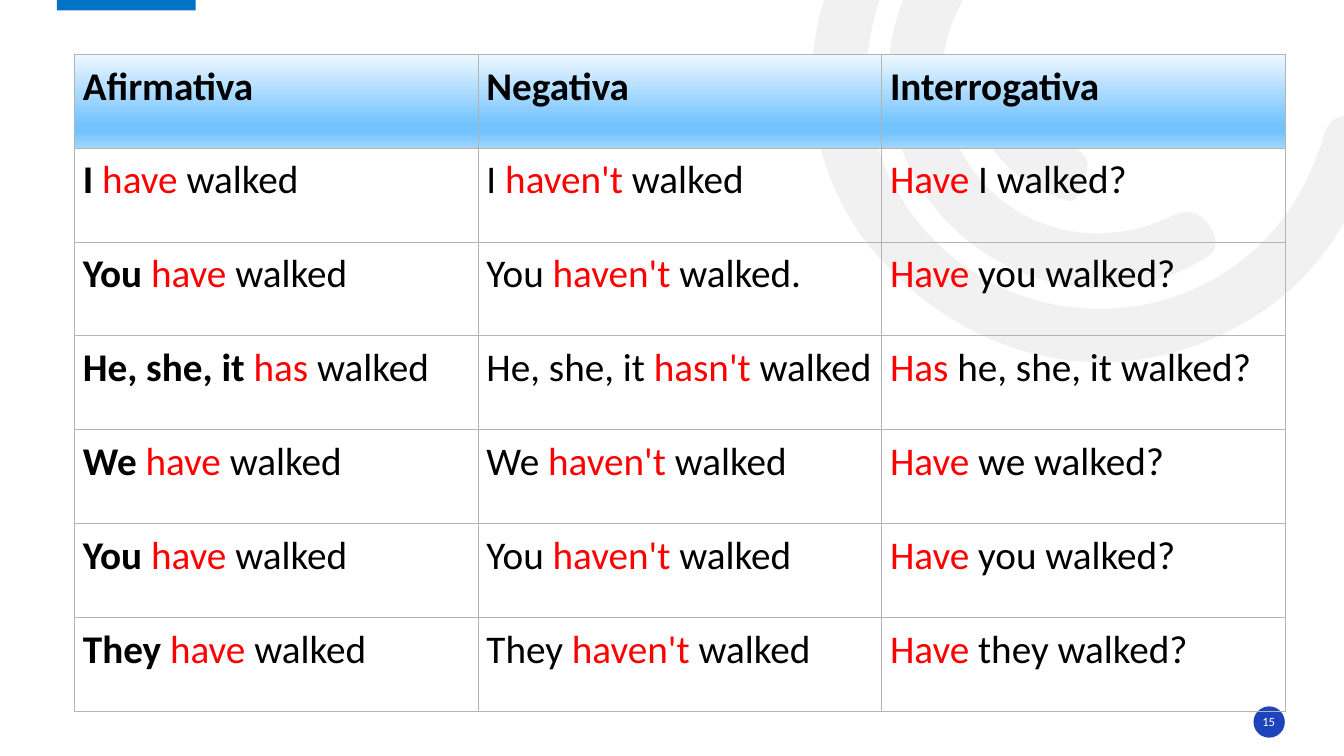
import math

import pptx
import pptx.dml.color
import pptx.enum.shapes
import pptx.enum.text
import pptx.oxml
import pptx.oxml.ns
import pptx.util

Cm, Pt = pptx.util.Cm, pptx.util.Pt
qn = pptx.oxml.ns.qn
SHAPE = pptx.enum.shapes.MSO_SHAPE
BLACK, RED, WHITE, GREY = "000000", "FF0000", "FFFFFF", "E7E6E6"
BLUE, BADGE, BORDER = "0072C7", "1E44BC", "B3B3B2"
HEADER_STOPS = [(0, "EFF8FF"), (74, "73C3FF"), (83, "73C3FF"), (100, "A2D7FF")]
SWIRL_TURN = 144.2

# Swirl parts in inches: unturned box, then start point and cubic curves as seen
SWIRL = [
    ((8.13, -2.02, 4.85, 6), [
        (8.51, 2.29),
        (7.99, 1.49), (7.87, 0.5), (8.38, -0.5),
        (8.9, -1.52), (9.76, -2.03), (10.9, -2.07),
        (11.05, -2.07), (11.21, -2.1), (11.31, -1.95),
        (11.44, -1.75), (11.27, -1.54), (10.98, -1.54),
        (9.67, -1.54), (8.65, -0.59), (8.6, 0.68),
        (8.56, 1.81), (9.36, 2.81), (10.46, 3.02),
        (11.6, 3.24), (12.7, 2.61), (13.07, 1.52),
        (13.09, 1.48), (13.11, 1.44), (13.12, 1.4),
        (13.16, 1.19), (13.27, 1.11), (13.49, 1.17),
        (13.73, 1.24), (13.67, 1.41), (13.61, 1.56),
        (13.34, 2.45), (12.78, 3.07), (11.91, 3.41),
        (10.7, 3.87), (9.36, 3.45), (8.51, 2.29)]),
    ((9.01, -0.78, 2.13, 4.26), [
        (9.22, 1.99),
        (8.62, 1.15), (8.69, 0.07), (9.4, -0.68),
        (9.51, -0.79), (9.62, -0.95), (9.8, -0.78),
        (9.95, -0.64), (9.97, -0.5), (9.79, -0.32),
        (9.25, 0.26), (9.2, 1.08), (9.65, 1.68),
        (10.08, 2.29), (10.88, 2.49), (11.61, 2.15),
        (11.82, 2.05), (11.93, 2.12), (12.03, 2.29),
        (12.13, 2.5), (11.97, 2.56), (11.83, 2.63),
        (10.96, 3.1), (9.83, 2.82), (9.22, 1.99)]),
    ((9.8, 0.37, 0.78, 1.83), [
        (9.87, 1.51),
        (9.75, 1.3), (9.64, 1.07), (9.64, 0.82),
        (9.64, 0.73), (9.61, 0.57), (9.76, 0.58),
        (9.92, 0.59), (10.13, 0.53), (10.16, 0.76),
        (10.21, 1.1), (10.36, 1.32), (10.67, 1.48),
        (10.88, 1.57), (10.76, 1.76), (10.72, 1.89),
        (10.68, 2.06), (10.55, 1.98), (10.45, 1.94),
        (10.21, 1.87), (10.03, 1.7), (9.87, 1.51)]),
]


def rgb(color):
    return pptx.dml.color.RGBColor.from_string(color)


def xml(text):
    """Build an element from text whose first tag is in the drawing namespace."""
    tag, rest = text.split(" ", 1)
    return pptx.oxml.parse_xml(f"{tag} {pptx.oxml.ns.nsdecls('a')} {rest}")


def unturn(point, box, degrees):
    """Turn a point back around the middle of a box."""
    x, y, w, h = box
    cx, cy = x + w / 2, y + h / 2
    dx, dy = point[0] - cx, point[1] - cy
    cos, sin = math.cos(math.radians(degrees)), math.sin(math.radians(degrees))
    return cx + dx * cos + dy * sin, cy - dx * sin + dy * cos


class Deck:
    font = "Calibri"

    def __init__(self, width, height):
        self.prs = pptx.Presentation()
        self.prs.slide_width, self.prs.slide_height = Cm(width), Cm(height)
        self.s = self.prs.slides.add_slide(self.prs.slide_layouts[6])

    def paint(self, sp, color):
        sp.shadow.inherit = False
        sp.fill.solid()
        sp.fill.fore_color.rgb = rgb(color)
        sp.line.fill.background()

    def shape(self, kind, x, y, w, h, color, turn=0):
        sp = self.s.shapes.add_shape(kind, Cm(x), Cm(y), Cm(w), Cm(h))
        sp.rotation = turn
        self.paint(sp, color)

    def curve(self, group, box, points, turn, color, opacity):
        flat = [unturn(p, box, turn) for p in points]
        start, *rest = [(Cm(2.54 * x), Cm(2.54 * y)) for x, y in flat]
        fb = group.shapes.build_freeform(*start)
        fb.add_line_segments(rest, close=True)
        sp = fb.convert_to_shape()
        # Fit the outline to its box
        left, top, width, height = [Cm(2.54 * v) for v in box]
        geometry = next(sp._element.iter(qn("a:path")))
        for pt in geometry.iter(qn("a:pt")):
            pt.set("x", str(int(pt.get("x")) + sp.left - left))
            pt.set("y", str(int(pt.get("y")) + sp.top - top))
        geometry.set("w", str(width))
        geometry.set("h", str(height))
        sp.left, sp.top, sp.width, sp.height = left, top, width, height
        sp.rotation = turn
        # Join every three segments into one cubic curve
        lines = geometry.findall(qn("a:lnTo"))
        for i in range(0, len(lines), 3):
            bezier = xml("<a:cubicBezTo />")
            lines[i].addprevious(bezier)
            for line in lines[i:i + 3]:
                bezier.append(line[0])
                geometry.remove(line)
        self.paint(sp, color)
        clr = sp.fill._xPr.find(".//" + qn("a:srgbClr"))
        clr.append(xml(f'<a:alpha val="{opacity * 1000}"/>'))

    def runs(self, p, parts, size):
        for text, color, bold in parts:
            r = p.add_run()
            r.text = text
            r.font.name, r.font.size, r.font.bold = self.font, Pt(size), bold
            r.font.color.rgb = rgb(color)

    def text(self, x, y, w, h, parts, size):
        tf = self.s.shapes.add_textbox(Cm(x), Cm(y), Cm(w), Cm(h)).text_frame
        tf.word_wrap = True
        tf.margin_left = tf.margin_right = tf.margin_top = tf.margin_bottom = 0
        tf.vertical_anchor = pptx.enum.text.MSO_ANCHOR.MIDDLE
        p = tf.paragraphs[0]
        p.alignment = pptx.enum.text.PP_ALIGN.CENTER
        self.runs(p, parts, size)

    def cell(self, cell, parts, size, stops=None):
        cell.margin_left = cell.margin_right = Cm(0.21)
        cell.margin_top = cell.margin_bottom = Cm(0.21)
        tcPr = cell._tc.get_or_add_tcPr()
        for side in ("lnL", "lnR", "lnT", "lnB"):
            tcPr.append(xml(f'<a:{side} w="{Pt(0.75)}"><a:solidFill>'
                            f'<a:srgbClr val="{BORDER}"/></a:solidFill></a:{side}>'))
        if stops:
            gs = "".join(f'<a:gs pos="{pos * 1000}"><a:srgbClr val="{color}"/></a:gs>'
                         for pos, color in stops)
            tcPr.append(xml(f'<a:gradFill rotWithShape="1"><a:gsLst>{gs}</a:gsLst>'
                            '<a:lin ang="5400000" scaled="0"/></a:gradFill>'))
        else:
            cell.fill.background()
        self.runs(cell.text_frame.paragraphs[0], parts, size)

    def table(self, x, y, w, h, rows, size):
        n_rows, n_cols = len(rows), len(rows[0])
        table = self.s.shapes.add_table(n_rows, n_cols, Cm(x), Cm(y), Cm(w), Cm(h)).table
        table.first_row = table.horz_banding = False
        for i, row in enumerate(rows):
            for j, parts in enumerate(row):
                self.cell(table.cell(i, j), parts, size, None if i else HEADER_STOPS)


def conjugation(subject, aux, stop=""):
    """Affirmative, negative and interrogative cells for one subject."""
    asked = subject if subject == "I" else subject.lower()
    return [
        [(f"{subject} ", BLACK, True), (f"{aux} ", RED, False), ("walked", BLACK, False)],
        [(f"{subject} ", BLACK, False), (f"{aux}n't ", RED, False),
         (f"walked{stop}", BLACK, False)],
        [(f"{aux.capitalize()} ", RED, False), (f"{asked} walked?", BLACK, False)],
    ]


def main():
    deck = Deck(33.87, 19.05)
    # Background swirl and top bar
    swirl = deck.s.shapes.add_group_shape()
    for box, points in SWIRL:
        deck.curve(swirl, box, points, SWIRL_TURN, GREY, 53)
    deck.shape(SHAPE.RECTANGLE, 1.43, -0.04, 3.5, 0.3, BLUE, 180)
    # Page number badge
    deck.shape(SHAPE.OVAL, 31.59, 17.8, 0.79, 0.79, BADGE)
    deck.text(31.57, 17.93, 0.81, 0.51, [("15", WHITE, False)], 9)
    # Verb table
    header = [[(name, BLACK, True)] for name in ("Afirmativa", "Negativa", "Interrogativa")]
    subjects = [("I", "have"), ("You", "have", "."), ("He, she, it", "has"),
                ("We", "have"), ("You", "have"), ("They", "have")]
    rows = [header] + [conjugation(*subject) for subject in subjects]
    deck.table(1.88, 1.37, 30.51, 16.56, rows, 28)
    deck.prs.save("out.pptx")


if __name__ == "__main__":
    main()
